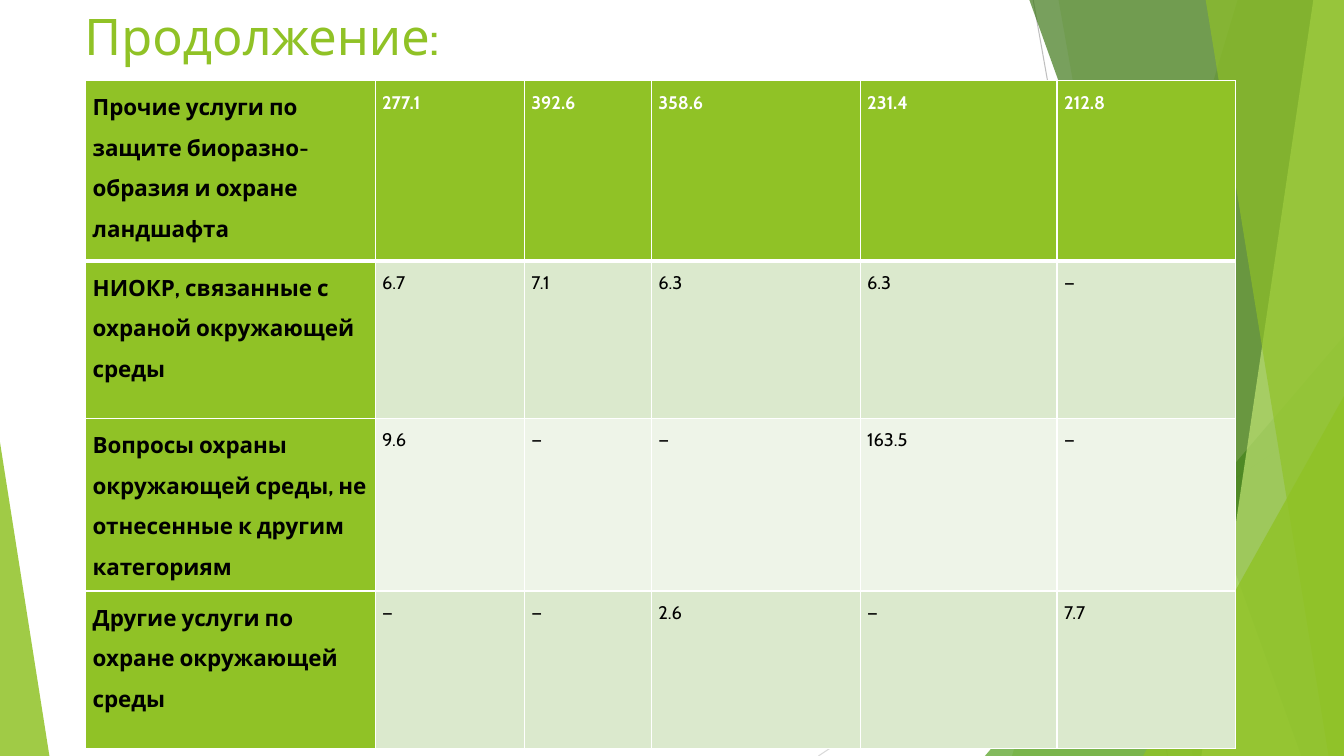
from dataclasses import dataclass

from lxml.etree import SubElement
from pptx import Presentation
from pptx.dml.color import RGBColor
from pptx.enum.shapes import MSO_CONNECTOR, MSO_SHAPE
from pptx.enum.text import MSO_ANCHOR
from pptx.oxml.ns import qn
from pptx.util import Pt

WIDTH, HEIGHT = 960, 540


@dataclass(frozen=True)
class Theme:
    font: str = "Cabin"
    lime: str = "90C226"
    green: str = "54A021"
    forest: str = "3F7819"
    pale_lime: str = "C0E474"
    band_dark: str = "DBE9CD"
    band_light: str = "EEF4E8"
    white: str = "FFFFFF"
    black: str = "000000"
    line_dark: str = "BFBFBF"
    line_light: str = "D9D9D9"
    title_size: float = 36
    label_size: float = 16
    value_size: float = 13


class SlideBuilder:
    def __init__(self, slide, theme):
        self.shapes = slide.shapes
        self.theme = theme

    def paint(self, shape, color, opacity):
        """Flat, borderless fill; opacity is in percent."""
        shape.shadow.inherit = False
        shape.line.fill.background()
        shape.fill.solid()
        shape.fill.fore_color.rgb = RGBColor.from_string(color)
        tint = shape._element.spPr.find(qn("a:solidFill"))[0]
        SubElement(tint, qn("a:alpha"), val=str(opacity * 1000))

    def hairline(self, start, end, color):
        line = self.shapes.add_connector(
            MSO_CONNECTOR.STRAIGHT, *(Pt(v) for v in start + end))
        line.line.color.rgb = RGBColor.from_string(color)
        line.line.width = Pt(0.75)
        SubElement(line._element.spPr, qn("a:effectLst"))

    def facet(self, top_x, bottom_x, color, opacity):
        """Full-height pane from a slanted left edge to the slide's right edge."""
        outline = self.shapes.build_freeform(Pt(top_x), Pt(-0.6), scale=1)
        outline.add_line_segments([
            (Pt(WIDTH), Pt(-0.6)), (Pt(WIDTH), Pt(HEIGHT)), (Pt(bottom_x), Pt(HEIGHT))])
        self.paint(outline.convert_to_shape(), color, opacity)

    def corner(self, left, top, width, apex, color, opacity):
        """Triangle standing on the bottom edge; apex 0 is left, 1 is right."""
        triangle = self.shapes.add_shape(
            MSO_SHAPE.ISOSCELES_TRIANGLE, Pt(left), Pt(top), Pt(width), Pt(HEIGHT - top))
        triangle.adjustments[0] = apex
        self.paint(triangle, color, opacity)

    def style_run(self, paragraph, size, color, bold=False):
        font = paragraph.runs[0].font
        font.name, font.size, font.bold = self.theme.font, Pt(size), bold
        font.color.rgb = RGBColor.from_string(color)

    def title(self, text, left, top, width, height):
        frame = self.shapes.add_textbox(Pt(left), Pt(top), Pt(width), Pt(height)).text_frame
        frame.word_wrap = True
        frame.vertical_anchor = MSO_ANCHOR.TOP
        frame.text = text
        self.style_run(frame.paragraphs[0], self.theme.title_size, self.theme.lime)

    def cell_borders(self, cell, bottom_width):
        properties = cell._tc.get_or_add_tcPr()
        widths = {"a:lnL": 1, "a:lnR": 1, "a:lnT": 1, "a:lnB": bottom_width}
        for index, (side, width) in enumerate(widths.items()):
            border = properties.makeelement(qn(side), {"w": str(Pt(width))})
            fill = SubElement(border, qn("a:solidFill"))
            SubElement(fill, qn("a:srgbClr"), val=self.theme.white)
            properties.insert(index, border)

    def table_cell(self, cell, text, row, column):
        theme = self.theme
        is_header, is_label = row == 0, column == 0
        band = theme.band_dark if row % 2 else theme.band_light
        cell.margin_left = cell.margin_right = Pt(5)
        cell.margin_top = cell.margin_bottom = 0
        cell.fill.solid()
        cell.fill.fore_color.rgb = RGBColor.from_string(
            theme.lime if is_header or is_label else band)
        cell.text_frame.text = text
        paragraph = cell.text_frame.paragraphs[0]
        paragraph.line_spacing = 1.5
        paragraph.space_after = Pt(8)
        self.style_run(
            paragraph,
            theme.label_size if is_label else theme.value_size,
            theme.white if is_header and not is_label else theme.black,
            bold=is_header or is_label)
        self.cell_borders(cell, 3 if is_header else 1)

    def table(self, rows, left, top, column_widths, row_heights):
        table = self.shapes.add_table(
            len(rows), len(column_widths), Pt(left), Pt(top),
            Pt(sum(column_widths)), Pt(sum(row_heights))).table
        for column, width in zip(table.columns, column_widths):
            column.width = Pt(width)
        for row, height in zip(table.rows, row_heights):
            row.height = Pt(height)
        for r, texts in enumerate(rows):
            for c, text in enumerate(texts):
                self.table_cell(table.cell(r, c), text, r, c)


SERVICES = [
    ("Прочие услуги по защите биоразно-образия и охране ландшафта",
     "277.1", "392.6", "358.6", "231.4", "212.8"),
    ("НИОКР, связанные с охраной окружающей среды",
     "6.7", "7.1", "6.3", "6.3", "—"),
    ("Вопросы охраны окружающей среды, не отнесенные к другим категориям",
     "9.6", "—", "—", "163.5", "—"),
    ("Другие услуги по охране окружающей среды",
     "—", "—", "2.6", "—", "7.7"),
]


def main():
    presentation = Presentation()
    presentation.slide_width, presentation.slide_height = Pt(WIDTH), Pt(HEIGHT)
    theme = Theme()
    page = SlideBuilder(
        presentation.slides.add_slide(presentation.slide_layouts[6]), theme)

    page.hairline((738, 0), (834, HEIGHT), theme.line_dark)
    page.hairline((WIDTH, 290), (584.6, HEIGHT), theme.line_light)
    page.facet(884.2, 722.9, theme.lime, 30)
    page.facet(756, 851.8, theme.lime, 20)
    page.corner(703.5, 240, 256.5, 1, theme.green, 72)
    page.facet(735.1, 929.5, theme.forest, 70)
    page.facet(938.2, 858.2, theme.pale_lime, 70)
    page.facet(861.1, 949, theme.lime, 65)
    page.corner(816.5, 283, 143.5, 1, theme.lime, 80)
    page.corner(0, 316, 35.3, 0, theme.lime, 85)

    page.title("Продолжение:", 53.3, 0, 676.8, 57.6)
    page.table(SERVICES, 61.2, 57.6,
               column_widths=(206.8, 106.6, 90.7, 149.2, 140.6, 127.3),
               row_heights=(129, 112.3, 123.3, 112.3))
    presentation.save("out.pptx")


if __name__ == "__main__":
    main()
